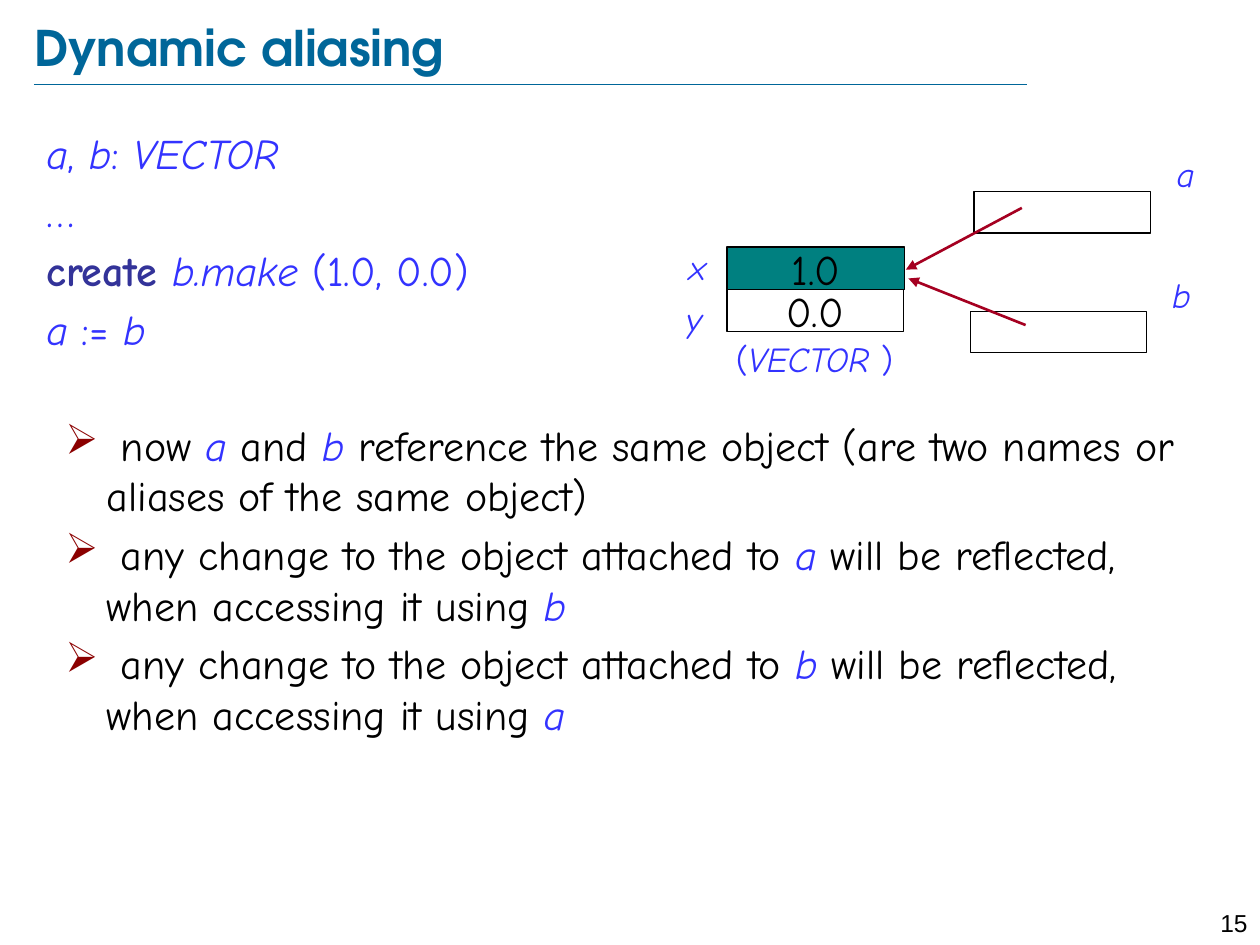
from pptx import Presentation
from pptx.dml.color import RGBColor
from pptx.enum.shapes import MSO_CONNECTOR, MSO_SHAPE
from pptx.enum.text import MSO_ANCHOR, PP_ALIGN
from pptx.oxml.ns import qn
from pptx.util import Inches, Pt
from lxml import etree

BLACK = RGBColor(0x00, 0x00, 0x00)
WHITE = RGBColor(0xFF, 0xFF, 0xFF)
TITLE_BLUE = RGBColor(0x00, 0x66, 0x99)
CODE_BLUE = RGBColor(0x33, 0x33, 0xFF)
KEYWORD_BLUE = RGBColor(0x33, 0x33, 0x99)
TEAL = RGBColor(0x00, 0x80, 0x80)
ARROW_RED = RGBColor(0xA5, 0x00, 0x21)
HAND_FONT = "Comic Neue"

# Run styles: colour, bold, italic
PLAIN = (BLACK, False, False)
CODE = (CODE_BLUE, False, False)
NAME = (CODE_BLUE, False, True)
KEYWORD = (KEYWORD_BLUE, True, False)

prs = Presentation()
prs.slide_width, prs.slide_height = Inches(10), Inches(7.5)
slide = prs.slides.add_slide(prs.slide_layouts[6])


def add_text(left, top, width, height, paragraphs, size=24, font=HAND_FONT,
             align=PP_ALIGN.LEFT):
    frame = slide.shapes.add_textbox(
        Inches(left), Inches(top), Inches(width), Inches(height)).text_frame
    frame.word_wrap = True
    for number, runs in enumerate(paragraphs):
        paragraph = frame.add_paragraph() if number else frame.paragraphs[0]
        paragraph.alignment = align
        if number:
            paragraph.space_before = Pt(size * 0.2)
        for text, (color, bold, italic) in runs:
            run = paragraph.add_run()
            run.text = text
            run.font.name, run.font.size = font, Pt(size)
            run.font.bold, run.font.italic = bold, italic
            run.font.color.rgb = color
    return frame


def add_line(x1, y1, x2, y2, color, width):
    line = slide.shapes.add_connector(
        MSO_CONNECTOR.STRAIGHT, Inches(x1), Inches(y1), Inches(x2), Inches(y2))
    line.line.color.rgb = color
    line.line.width = Pt(width)
    etree.SubElement(line._element.spPr, qn("a:effectLst"))
    return line


# Title, rule and page number
add_line(0.27, 0.67, 8.15, 0.67, TITLE_BLUE, 0.25)
title = add_text(0.27, 0.13, 8.69, 0.48,
                 [[("Dynamic aliasing", (TITLE_BLUE, True, False))]],
                 size=28, font="TeX Gyre Adventor")
title.margin_left = title.margin_right = title.margin_top = title.margin_bottom = 0
title.vertical_anchor = MSO_ANCHOR.MIDDLE
add_text(9.3, 7.16, 0.7, 0.24, [[("15", PLAIN)]],
         size=14, font="Arial", align=PP_ALIGN.RIGHT)

# Code
add_text(0.27, 0.96, 4.8, 1.95, [
    [("a", NAME), (", ", CODE), ("b", NAME), (": ", CODE), ("VECTOR", NAME)],
    [("…", CODE)],
    [("create ", KEYWORD), ("b.make", NAME), (" (1.0, 0.0)", CODE)],
    [("a", NAME), (" := ", CODE), ("b", NAME)],
])

# Consequences
consequences = [[
    (" now ", PLAIN), ("a", NAME), (" and ", PLAIN), ("b", NAME),
    (" reference the same object (are two names or aliases of the same object)", PLAIN),
]]
for changed, accessed in (("a", "b"), ("b", "a")):
    consequences.append([
        (" any change to the object attached to ", PLAIN), (changed, NAME),
        (" will be reflected, when accessing it using ", PLAIN), (accessed, NAME),
    ])
bullets = add_text(0.27, 3.28, 9.4, 2.7, consequences)
for paragraph in bullets.paragraphs:
    properties = paragraph._p.get_or_add_pPr()
    properties.set("marL", str(Inches(0.48)))
    properties.set("indent", str(Inches(-0.33)))
    bullet_color = etree.SubElement(properties, qn("a:buClr"))
    etree.SubElement(bullet_color, qn("a:srgbClr"), val="8B0000")
    etree.SubElement(properties, qn("a:buChar"), char="➢")

# Object fields and the two references
for left, top, width, height, fill, value in (
        (5.77, 1.96, 1.41, 0.34, TEAL, "1.0"),
        (5.77, 2.3, 1.4, 0.33, WHITE, "0.0"),
        (7.73, 1.52, 1.4, 0.33, WHITE, ""),
        (7.7, 2.47, 1.4, 0.33, WHITE, "")):
    cell = slide.shapes.add_shape(
        MSO_SHAPE.RECTANGLE, Inches(left), Inches(top), Inches(width), Inches(height))
    cell.shadow.inherit = False
    cell.fill.solid()
    cell.fill.fore_color.rgb = fill
    cell.line.color.rgb = BLACK
    cell.line.width = Pt(0.75)
    if value:
        cell.text_frame.word_wrap = False
        cell.text_frame.vertical_anchor = MSO_ANCHOR.MIDDLE
        paragraph = cell.text_frame.paragraphs[0]
        paragraph.alignment = PP_ALIGN.CENTER
        run = paragraph.add_run()
        run.text = value
        run.font.name, run.font.size = HAND_FONT, Pt(24)
        run.font.color.rgb = BLACK

# Diagram labels
add_text(5.56, 2.63, 1.81, 0.44, [[("(", CODE), ("VECTOR ", NAME), (")", CODE)]],
         size=20, align=PP_ALIGN.CENTER)
for label, left, top in (("a", 9.14, 1.16), ("b", 9.11, 2.12),
                         ("x", 5.26, 1.9), ("y", 5.23, 2.31)):
    add_text(left, top, 0.44, 0.44, [[(label, NAME)]], size=20, align=PP_ALIGN.RIGHT)

# Arrows from the references to the object
for x1, y1, x2, y2 in ((8.11, 1.65, 7.19, 2.14), (8.14, 2.58, 7.21, 2.21)):
    arrow = add_line(x1, y1, x2, y2, ARROW_RED, 1.5)
    etree.SubElement(arrow.line._get_or_add_ln(), qn("a:tailEnd"), type="triangle")

prs.save("out.pptx")
